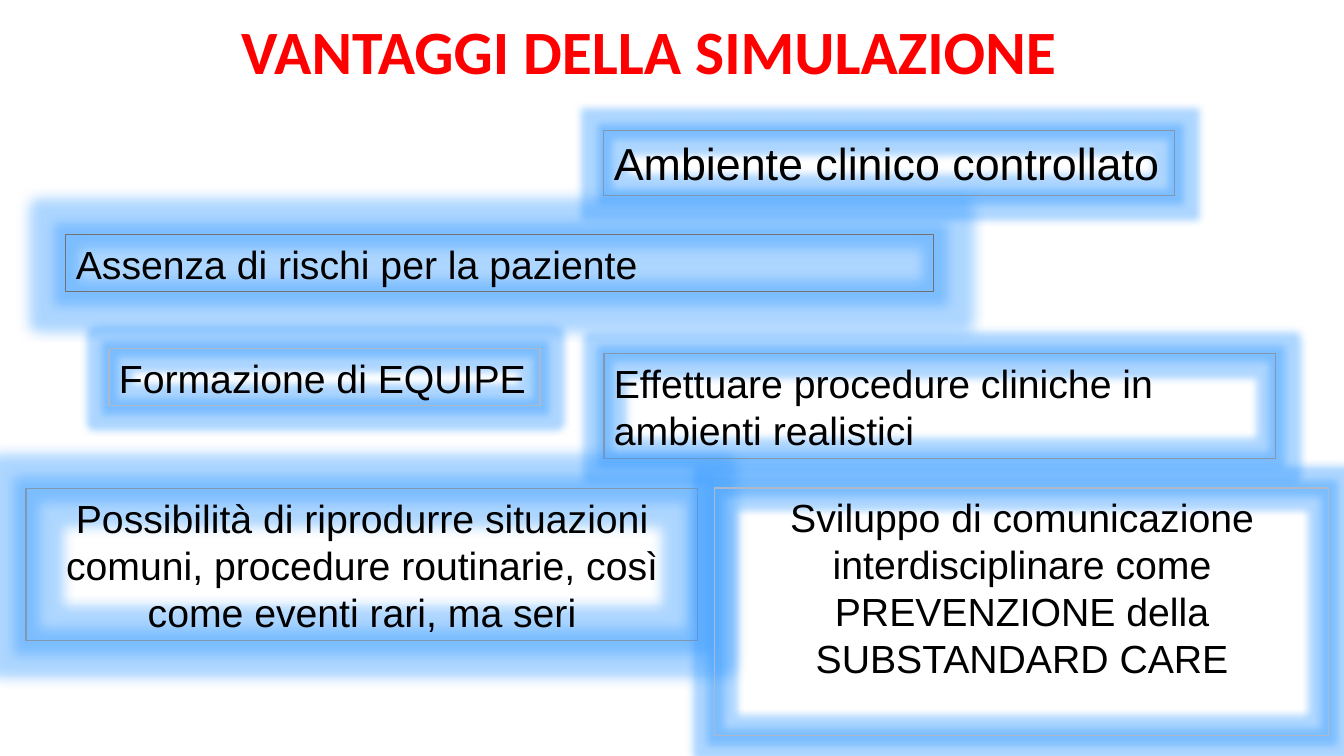
from dataclasses import dataclass

from lxml.etree import SubElement
from pptx import Presentation
from pptx.dml.color import RGBColor
from pptx.enum.shapes import MSO_SHAPE
from pptx.enum.text import MSO_ANCHOR, PP_ALIGN
from pptx.oxml.ns import qn
from pptx.util import Emu, Pt

EMU_PER_PX = 914400 / 100.8


@dataclass(frozen=True)
class Theme:
    title_color: str = "FF0000"
    text_color: str = "000000"
    glow_color: str = "3399FF"
    glow_opacity: int = 40
    steel: str = "8497B0"
    pale_steel: str = "ADB9CA"
    gray: str = "767171"
    title_font: str = "Calibri"
    body_font: str = "Arial"
    title_size: int = 44
    large_size: int = 32
    body_size: int = 28
    small_glow: int = 11
    large_glow: int = 18


THEME = Theme()

# text, (left, top, width, height) in px, line colour, text size, glow radius, alignment
ADVANTAGES = [
    ("Effettuare procedure cliniche in ambienti realistici", (604, 354, 672, 105),
     THEME.steel, THEME.body_size, THEME.small_glow, PP_ALIGN.LEFT),
    ("Formazione di EQUIPE", (109, 349, 431, 57),
     THEME.pale_steel, THEME.body_size, THEME.small_glow, PP_ALIGN.LEFT),
    ("Ambiente clinico controllato", (604, 131, 571, 65),
     THEME.steel, THEME.large_size, THEME.small_glow, PP_ALIGN.LEFT),
    ("Assenza di rischi per la paziente", (66, 235, 868, 57),
     THEME.gray, THEME.body_size, THEME.large_glow, PP_ALIGN.LEFT),
    ("Possibilità di riprodurre situazioni comuni, procedure routinarie, così "
     "come eventi rari, ma seri", (26, 489, 672, 152),
     THEME.steel, THEME.body_size, THEME.large_glow, PP_ALIGN.CENTER),
    ("Sviluppo di comunicazione interdisciplinare come PREVENZIONE della "
     "SUBSTANDARD CARE", (715, 488, 614, 248),
     THEME.pale_steel, THEME.body_size, THEME.small_glow, PP_ALIGN.CENTER),
]


def px(length):
    return Emu(round(length * EMU_PER_PX))


def format_font(font, name, size, color, bold=False):
    font.name = name
    font.size = Pt(size)
    font.color.rgb = RGBColor.from_string(color)
    font.bold = bold


def add_glow(shape, radius):
    """Replace the shape's effects with a translucent glow, radius in points."""
    shape.shadow.inherit = False
    effects = shape._element.spPr.find(qn("a:effectLst"))
    glow = SubElement(effects, qn("a:glow"), rad=str(Pt(radius)))
    color = SubElement(glow, qn("a:srgbClr"), val=THEME.glow_color)
    SubElement(color, qn("a:alpha"), val=str(THEME.glow_opacity * 1000))


def add_glowing_box(slide, text, bounds, line_color, size, glow_radius, alignment):
    shape = slide.shapes.add_shape(MSO_SHAPE.RECTANGLE, *map(px, bounds))
    shape.fill.background()
    shape.line.color.rgb = RGBColor.from_string(line_color)
    shape.line.width = Pt(0.75)
    add_glow(shape, glow_radius)
    frame = shape.text_frame
    frame.word_wrap = True
    frame.vertical_anchor = MSO_ANCHOR.TOP
    frame.text = text
    paragraph = frame.paragraphs[0]
    paragraph.alignment = alignment
    format_font(paragraph.runs[0].font, THEME.body_font, size, THEME.text_color)


def set_title(slide, text, bounds):
    title = slide.shapes.title
    title.left, title.top, title.width, title.height = map(px, bounds)
    frame = title.text_frame
    frame.vertical_anchor = MSO_ANCHOR.MIDDLE
    frame.text = text
    paragraph = frame.paragraphs[0]
    paragraph.alignment = PP_ALIGN.LEFT
    paragraph.line_spacing = 0.9
    format_font(paragraph.runs[0].font, THEME.title_font, THEME.title_size,
                THEME.title_color, bold=True)


def main():
    presentation = Presentation()
    presentation.slide_width = px(1344)
    presentation.slide_height = px(756)
    slide = presentation.slides.add_slide(presentation.slide_layouts.get_by_name("Title Only"))
    set_title(slide, "VANTAGGI DELLA SIMULAZIONE", (231, -6, 905, 122))
    for advantage in ADVANTAGES:
        add_glowing_box(slide, *advantage)
    presentation.save("out.pptx")


if __name__ == "__main__":
    main()
